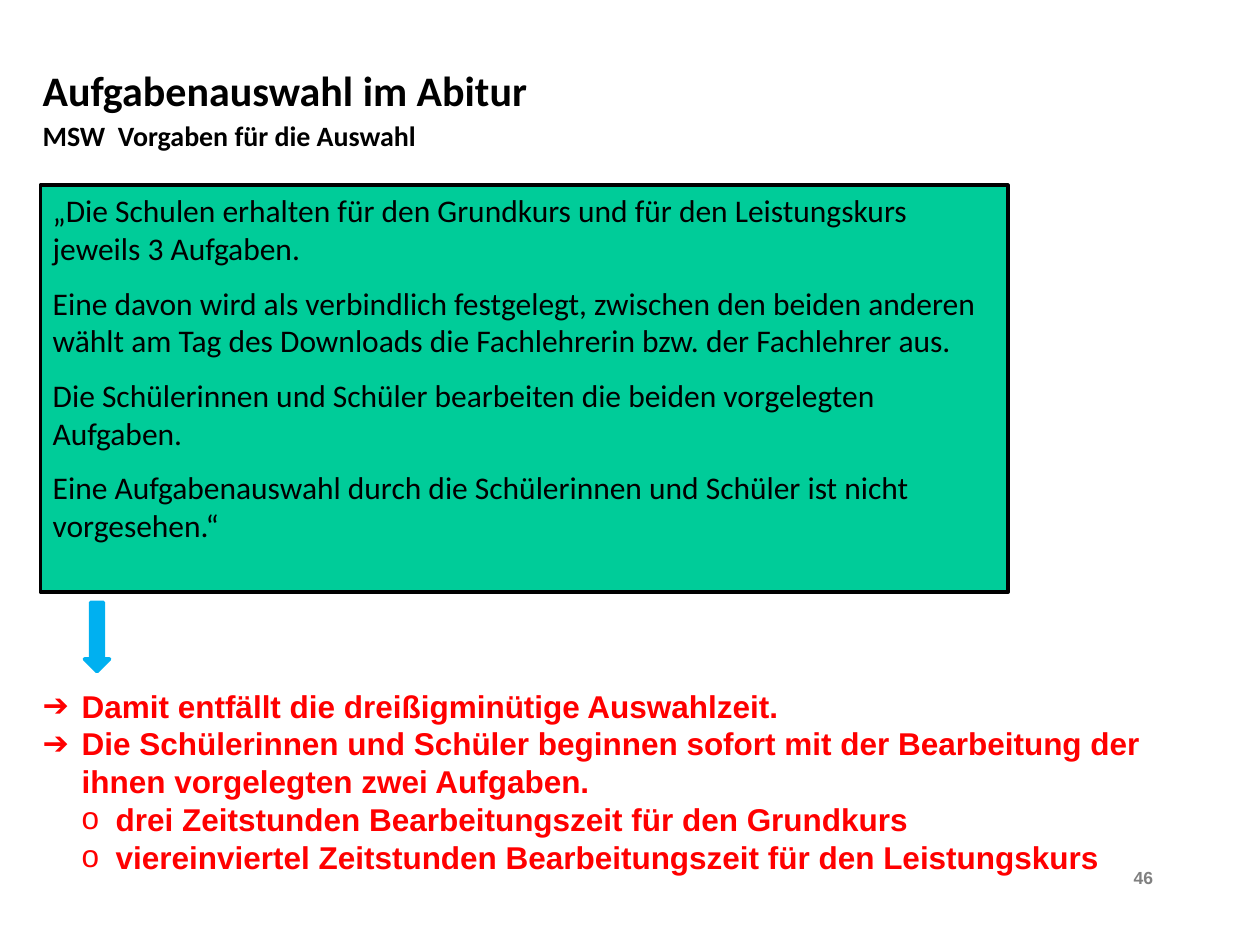
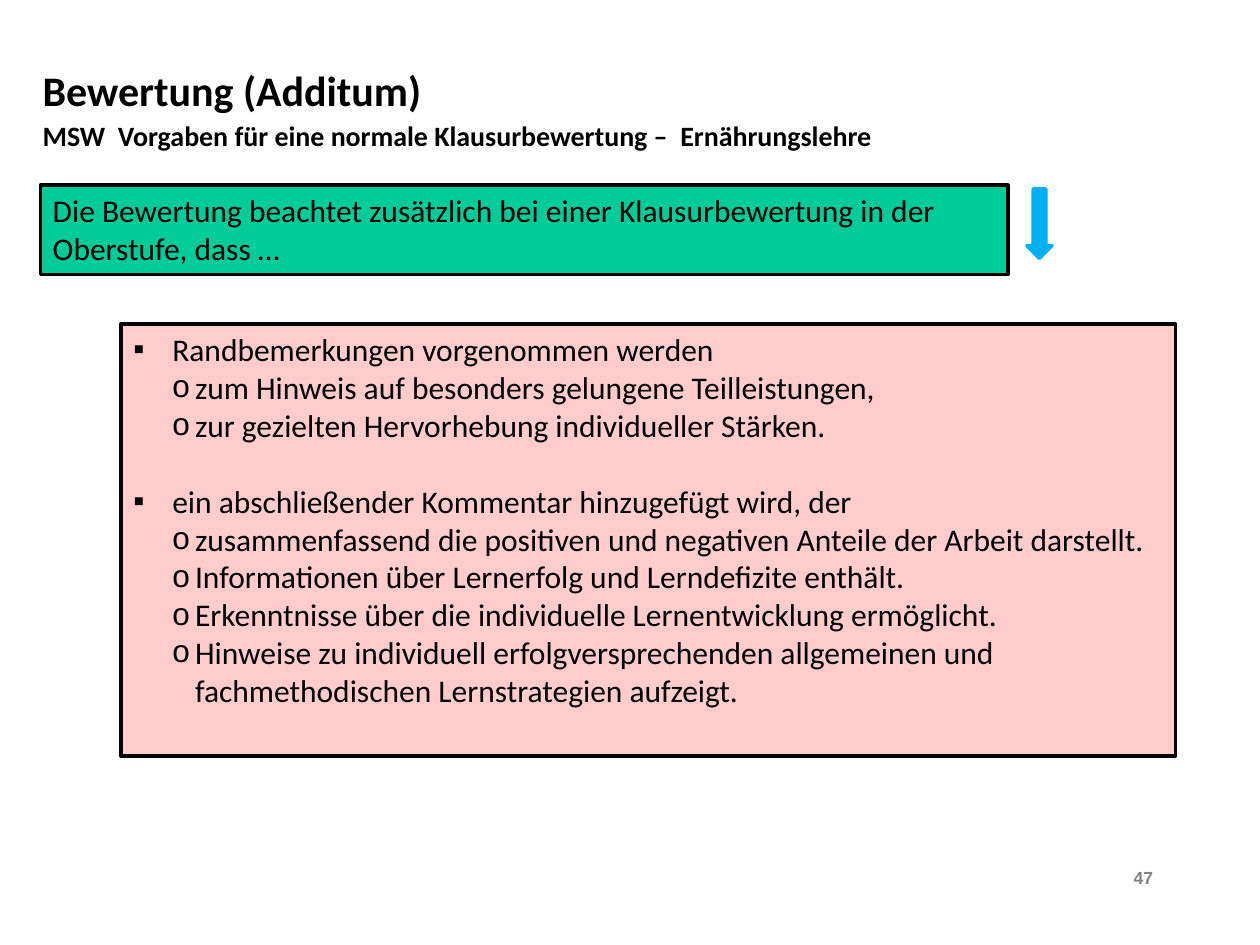
from lxml import etree
from pptx import Presentation
from pptx.dml.color import RGBColor
from pptx.enum import shapes, text
from pptx.oxml import ns
from pptx.util import Inches, Pt

BLACK = RGBColor(0x00, 0x00, 0x00)
GREY = RGBColor(0x80, 0x80, 0x80)
GREEN = RGBColor(0x00, 0xCC, 0x99)
PINK = RGBColor(0xFF, 0xCC, 0xCC)
BLUE = RGBColor(0x00, 0xB0, 0xF0)
RED = RGBColor(0xFF, 0x00, 0x00)

BODY, LABEL = "Calibri", "Arial"
LEFT = 0.24      # left edge of the headings
BOX_LEFT, BOX_TOP, BOX_WIDTH = 0.32, 1.47, 7.68
MAIN = 0.31      # text indent of main bullets, where sub-bullets hang


def add_bullet(p, char, margin, hang):
    """Give a paragraph a hanging bullet; lengths in inches."""
    pPr = p._p.get_or_add_pPr()
    pPr.set("marL", str(Inches(margin)))
    pPr.set("indent", str(-Inches(hang)))
    etree.SubElement(pPr, ns.qn("a:buFont")).set("typeface", LABEL)
    etree.SubElement(pPr, ns.qn("a:buChar")).set("char", char)


def write(sp, items, size=18, font=BODY, color=BLACK, bold=False, gap=0,
          align=text.PP_ALIGN.LEFT, anchor=text.MSO_ANCHOR.TOP):
    """Write items, each a text or (text, bullet) or (text, bullet, space before)."""
    tf = sp.text_frame
    tf.word_wrap = True
    tf.vertical_anchor = anchor
    for i, item in enumerate(items):
        words, bullet, before = (
            (item, None, gap) if isinstance(item, str) else (*item, gap)[:3])
        p = tf.paragraphs[0] if i == 0 else tf.add_paragraph()
        if bullet:
            add_bullet(p, *bullet)
        p.alignment = align
        p.space_before = Pt(before if i else 0)
        r = p.add_run()
        r.text = words
        r.font.name, r.font.size, r.font.bold = font, Pt(size), bold
        r.font.color.rgb = color


class Deck:
    def __init__(self):
        self.prs = Presentation()
        self.prs.slide_width, self.prs.slide_height = Inches(10), Inches(7.5)
        self.s = None

    def slide(self, title, subtitle, number):
        """Start a slide with its headings and page number."""
        self.s = self.prs.slides.add_slide(self.prs.slide_layouts[6])
        self.label([title], LEFT, 0.27, 9, 0.88, size=24, bold=True,
                   anchor=text.MSO_ANCHOR.MIDDLE)
        self.label([subtitle], LEFT, 0.89, 9, 0.57, size=16, bold=True)
        self.label([str(number)], 7.92, 6.83, 1.33, 0.42, size=10, font=LABEL,
                   color=GREY, bold=True, align=text.PP_ALIGN.RIGHT)

    def label(self, items, x, y, w, h, **style):
        sp = self.s.shapes.add_textbox(*map(Inches, (x, y, w, h)))
        write(sp, items, **style)

    def shape(self, kind, x, y, w, h, fill, line):
        sp = self.s.shapes.add_shape(kind, *map(Inches, (x, y, w, h)))
        sp.shadow.inherit = False
        sp.fill.solid()
        sp.fill.fore_color.rgb = fill
        sp.line.color.rgb = line
        sp.line.width = Pt(2)
        return sp

    def box(self, items, x, y, w, h, fill, **style):
        sp = self.shape(shapes.MSO_SHAPE.RECTANGLE, x, y, w, h, fill, BLACK)
        write(sp, items, **style)

    def arrow(self, x, y):
        self.shape(shapes.MSO_SHAPE.DOWN_ARROW, x, y, 0.2, 0.55, BLUE, BLUE)


def task_selection(deck):
    deck.slide("Aufgabenauswahl im Abitur", "MSW  Vorgaben für die Auswahl", 46)

    # Quoted rules
    deck.box([
        "„Die Schulen erhalten für den Grundkurs und für den Leistungskurs "
        "jeweils 3 Aufgaben.",
        "Eine davon wird als verbindlich festgelegt, zwischen den beiden anderen "
        "wählt am Tag des Downloads die Fachlehrerin bzw. der Fachlehrer aus.",
        "Die Schülerinnen und Schüler bearbeiten die beiden vorgelegten Aufgaben.",
        "Eine Aufgabenauswahl durch die Schülerinnen und Schüler ist nicht "
        "vorgesehen.“",
    ], BOX_LEFT, BOX_TOP, BOX_WIDTH, 3.23, GREEN, gap=9.5)
    deck.arrow(0.67, 4.78)

    # Consequences
    main, sub = ("➔", MAIN, MAIN), ("o", MAIN + 0.27, 0.27)
    deck.label([
        ("Damit entfällt die dreißigminütige Auswahlzeit.", main),
        ("Die Schülerinnen und Schüler beginnen sofort mit der Bearbeitung der "
         "ihnen vorgelegten zwei Aufgaben.", main),
        ("drei Zeitstunden Bearbeitungszeit für den Grundkurs", sub),
        ("viereinviertel Zeitstunden Bearbeitungszeit für den Leistungskurs", sub),
    ], LEFT, 5.4, 9.4, 1.6, font=LABEL, color=RED, bold=True)


def grading(deck):
    deck.slide("Bewertung (Additum)",
               "MSW  Vorgaben für eine normale Klausurbewertung –  Ernährungslehre",
               47)

    # Lead-in
    deck.box(["Die Bewertung beachtet zusätzlich bei einer Klausurbewertung in der "
              "Oberstufe, dass …"], BOX_LEFT, BOX_TOP, BOX_WIDTH, 0.71, GREEN)

    # Criteria
    main, sub = ("▪", MAIN, MAIN), ("o", MAIN + 0.18, 0.18)
    deck.box([
        ("Randbemerkungen vorgenommen werden", main),
        ("zum Hinweis auf besonders gelungene Teilleistungen,", sub),
        ("zur gezielten Hervorhebung individueller Stärken.", sub),
        ("ein abschließender Kommentar hinzugefügt wird, der", main, 22),
        ("zusammenfassend die positiven und negativen Anteile der Arbeit "
         "darstellt.", sub),
        ("Informationen über Lernerfolg und Lerndefizite enthält.", sub),
        ("Erkenntnisse über die individuelle Lernentwicklung ermöglicht.", sub),
        ("Hinweise zu individuell erfolgversprechenden allgemeinen und "
         "fachmethodischen Lernstrategien aufzeigt.", sub),
    ], 0.96, 2.57, 8.37, 3.43, PINK)
    deck.arrow(8.15, 1.5)


def main():
    deck = Deck()
    task_selection(deck)
    grading(deck)
    deck.prs.save("out.pptx")


if __name__ == "__main__":
    main()
